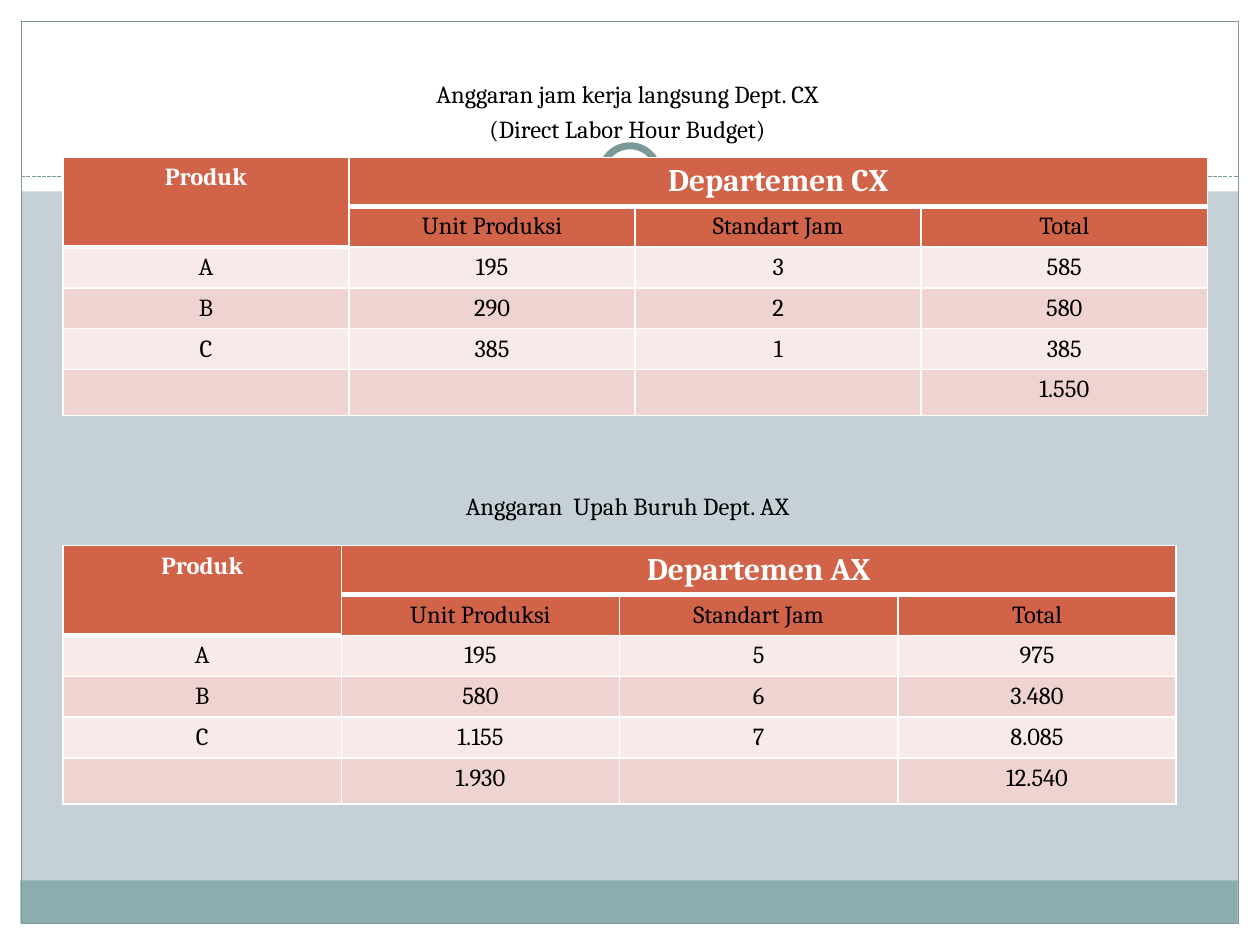
import pptx
import pptx.util
import pptx.dml.color
import pptx.enum.dml
import pptx.enum.shapes
import pptx.enum.text
import pptx.oxml.ns
from lxml import etree

Cm = pptx.util.Cm
Pt = pptx.util.Pt
qn = pptx.oxml.ns.qn
KIND = pptx.enum.shapes.MSO_SHAPE
CENTER = pptx.enum.text.PP_ALIGN.CENTER

FONT = "Cambria"
COLORS = {
    "back": "C5D1D7", "white": "FFFFFF", "black": "000000", "band": "8CADAE",
    "edge": "7C999A", "head": "D16349", "odd": "F7EAE9", "even": "EED3D0",
}
TITLES = ["Unit Produksi", "Standart Jam", "Total"]
ROWS_CX = [
    ["A", "195", "3", "585"],
    ["B", "290", "2", "580"],
    ["C", "385", "1", "385"],
    ["", "", "", "1.550"],
]
ROWS_AX = [
    ["A", "195", "5", "975"],
    ["B", "580", "6", "3.480"],
    ["C", "1.155", "7", "8.085"],
    ["", "1.930", "", "12.540"],
]


def rgb(name):
    return pptx.dml.color.RGBColor.from_string(COLORS[name])


def add_shape(slide, kind, box, fill=None, line=None, width=0.75):
    shape = slide.shapes.add_shape(kind, *map(Cm, box))
    shape.shadow.inherit = False
    if fill:
        shape.fill.solid()
        shape.fill.fore_color.rgb = rgb(fill)
    else:
        shape.fill.background()
    if line:
        shape.line.color.rgb = rgb(line)
        shape.line.width = Pt(width)
    else:
        shape.line.fill.background()


def add_rule(slide, left, right, y):
    """Draw a dashed level line."""
    rule = slide.shapes.add_connector(
        pptx.enum.shapes.MSO_CONNECTOR.STRAIGHT, Cm(left), Cm(y), Cm(right), Cm(y))
    rule.line.color.rgb = rgb("edge")
    rule.line.width = Pt(0.75)
    rule.line.dash_style = pptx.enum.dml.MSO_LINE.SQUARE_DOT
    etree.SubElement(rule._element.spPr, qn("a:effectLst"))


def add_frame(slide):
    """Draw the white margins, the border, the foot band and the ring."""
    for box in [(0, 18.62, 25.4, 0.43), (0, 0, 25.4, 3.86),
                (0, 0, 0.43, 19.05), (24.97, 0, 0.43, 19.05)]:
        add_shape(slide, KIND.RECTANGLE, box, "white")
    add_shape(slide, KIND.RECTANGLE, (0.41, 17.75, 24.54, 0.87), "band")
    add_shape(slide, KIND.RECTANGLE, (0.43, 0.43, 24.54, 18.19), line="edge")
    add_rule(slide, 0.43, 24.97, 3.56)
    add_shape(slide, KIND.OVAL, (11.85, 2.67, 1.7, 1.7), "white")
    add_shape(slide, KIND.OVAL, (12.12, 2.94, 1.16, 1.16), "white", "edge", 4)


def style(para, size, color, bold=False):
    para.alignment = CENTER
    for run in para.runs:
        run.font.name = FONT
        run.font.size = Pt(size)
        run.font.bold = bold
        run.font.color.rgb = rgb(color)


def set_heads(slide):
    """Fill the body placeholder with the captions of both tables."""
    slide.shapes.title._element.getparent().remove(slide.shapes.title._element)
    body = slide.placeholders[1]
    slide.shapes._spTree.append(body._element)
    body.left, body.top, body.width, body.height = map(Cm, (0.84, 1.47, 23.62, 15.47))
    frame = body.text_frame
    frame.text = ("Anggaran jam kerja langsung Dept. CX\n"
                  "(Direct Labor Hour Budget)\n"
                  "Anggaran  Upah Buruh Dept. AX")
    for para, gap in zip(frame.paragraphs, (2.8, 2.8, 199)):
        style(para, 14, "black")
        para.space_before = Pt(gap)
        props = para._p.get_or_add_pPr()
        props.set("marL", "0")
        props.set("indent", "0")
        etree.SubElement(props, qn("a:buNone"))


def set_edges(cell, top, bottom):
    props = cell._tc.get_or_add_tcPr()
    for side, width in (("L", 1), ("R", 1), ("T", top), ("B", bottom)):
        line = etree.SubElement(props, qn("a:ln" + side), w=str(Pt(width)))
        fill = etree.SubElement(line, qn("a:solidFill"))
        etree.SubElement(fill, qn("a:srgbClr"), val=COLORS["white"])


def edge(row, col):
    """Give the width of the line below a cell: thick under the header."""
    return 3 if row == 0 or (row == 1 and col == 0) else 1


def set_cell(cell, text, row, col):
    set_edges(cell, edge(row - 1, col) if row else 1, edge(row, col))
    cell.fill.solid()
    shade = "head" if row < 2 else ("odd", "even")[row % 2]
    cell.fill.fore_color.rgb = rgb(shade)
    para = cell.text_frame.paragraphs[0]
    para.text = text
    size = 18 if row == 0 and col else 14
    style(para, size, "black" if row else "white", row == 0)
    if not text:
        etree.SubElement(para._p, qn("a:endParaRPr"), sz="1400")


def add_budget(slide, top, width, dept, rows):
    cells = [["Produk", dept, "", ""], ["", *TITLES], *rows]
    shape = slide.shapes.add_table(
        len(cells), 4, Cm(1.27), Cm(top), Cm(width), Cm(4.94))
    table = shape.table
    for i, row in enumerate(table.rows):
        row.height = Cm(0.93 if i in (0, len(cells) - 1) else 0.77)
    for i, texts in enumerate(cells):
        for j, text in enumerate(texts):
            set_cell(table.cell(i, j), text, i, j)
    table.cell(0, 0).merge(table.cell(1, 0))
    table.cell(0, 1).merge(table.cell(0, 3))


def main():
    deck = pptx.Presentation()
    deck.slide_width, deck.slide_height = Cm(25.4), Cm(19.05)
    slide = deck.slides.add_slide(deck.slide_layouts[1])
    slide.background.fill.solid()
    slide.background.fill.fore_color.rgb = rgb("back")
    add_frame(slide)
    set_heads(slide)
    add_budget(slide, 3.17, 23.07, "Departemen CX", ROWS_CX)
    add_budget(slide, 11, 22.44, "Departemen AX", ROWS_AX)
    deck.save("out.pptx")


if __name__ == "__main__":
    main()
